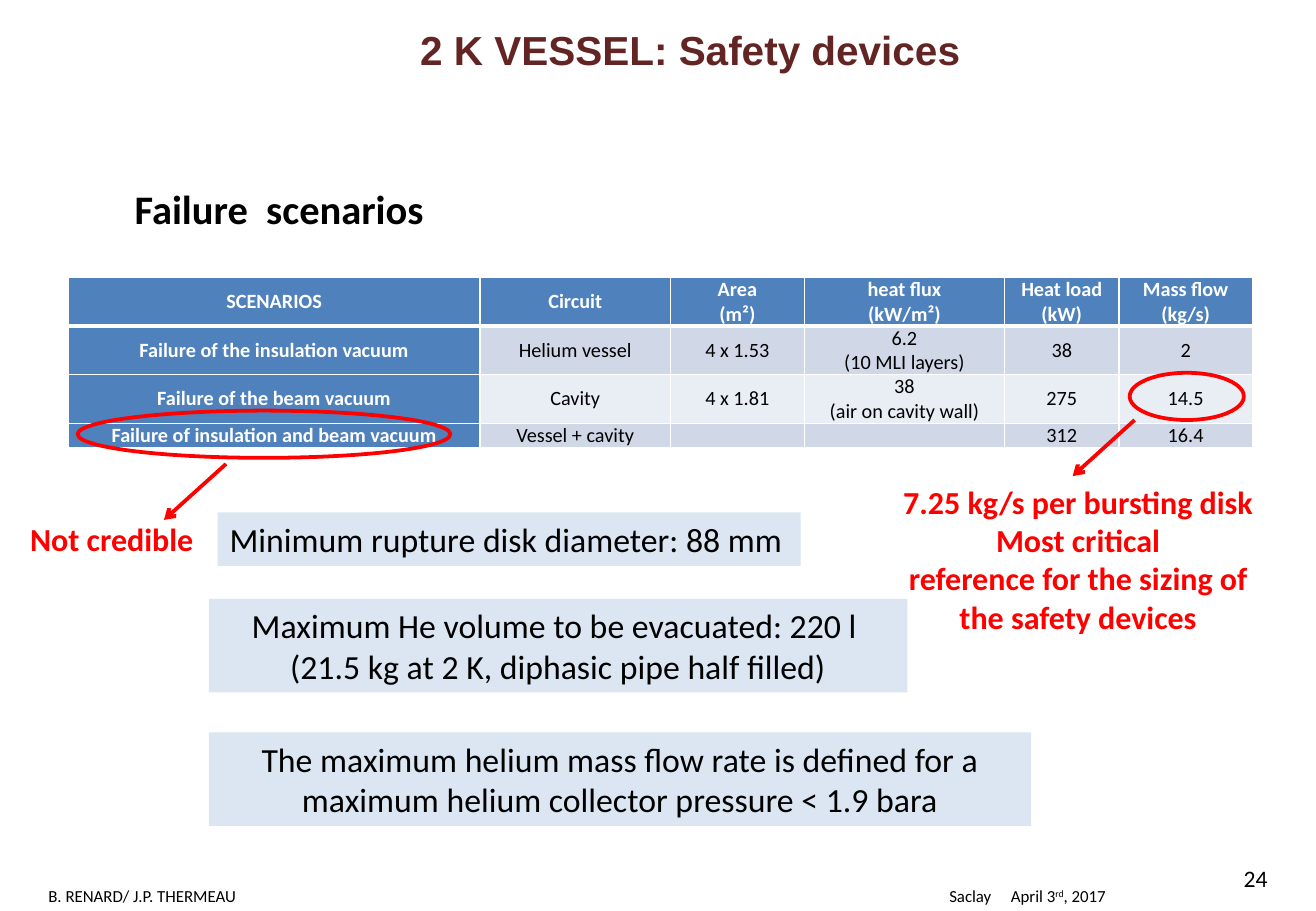
from lxml import etree
from pptx import Presentation
from pptx.dml.color import RGBColor
from pptx.enum.shapes import MSO_CONNECTOR, MSO_SHAPE
from pptx.enum.text import MSO_ANCHOR, PP_ALIGN
from pptx.oxml.ns import qn
from pptx.util import Pt

LEFT, CENTER = PP_ALIGN.LEFT, PP_ALIGN.CENTER
TOP, MIDDLE = MSO_ANCHOR.TOP, MSO_ANCHOR.MIDDLE
RECTANGLE, OVAL = MSO_SHAPE.RECTANGLE, MSO_SHAPE.OVAL
STRAIGHT = MSO_CONNECTOR.STRAIGHT

BLACK = RGBColor(0x00, 0x00, 0x00)
WHITE = RGBColor(0xFF, 0xFF, 0xFF)
RED = RGBColor(0xFF, 0x00, 0x00)
MAROON = RGBColor(0x63, 0x25, 0x23)
BLUE = RGBColor(0x4F, 0x81, 0xBD)
PALE_BLUE = RGBColor(0xDC, 0xE6, 0xF2)
BAND_DARK = RGBColor(0xD0, 0xD8, 0xE8)
BAND_LIGHT = RGBColor(0xE9, 0xED, 0xF4)

COLUMNS = [244, 113, 79.2, 118.8, 67.7, 79.2]
ROWS = [28.8, 28.8, 28.8, 14.4]
SCENARIOS = [
    ["SCENARIOS", "Circuit", "Area\n(m²)", "heat flux\n(kW/m²)", "Heat load\n(kW)", "Mass flow\n(kg/s)"],
    ["Failure of the insulation vacuum", "Helium vessel", "4 x 1.53", "6.2\n(10 MLI layers)", "38", "2"],
    ["Failure of the beam vacuum", "Cavity", "4 x 1.81", "38\n(air on cavity wall)", "275", "14.5"],
    ["Failure of insulation and beam vacuum", "Vessel + cavity", "", "", "312", "16.4"],
]


class Slide:
    font = "Calibri"
    line_width = 2.25

    def __init__(self, prs):
        self.s = prs.slides.add_slide(prs.slide_layouts[6])

    def run(self, p, text, size, color=BLACK, bold=False, name=font):
        r = p.add_run()
        r.text = text
        for key, value in {"size": Pt(size), "bold": bold, "name": name}.items():
            setattr(r.font, key, value)
        r.font.color.rgb = color
        return r

    def fill_text(self, tf, text, size, align=LEFT, **style):
        for i, line in enumerate(text.split("\n")):
            p = tf.paragraphs[0] if i == 0 else tf.add_paragraph()
            p.alignment = align
            if line:
                self.run(p, line, size, **style)
            else:
                etree.SubElement(p._p, qn("a:endParaRPr"), sz=str(size * 100))

    def text(self, box, text, size, anchor=TOP, **style):
        sp = self.s.shapes.add_textbox(*map(Pt, box))
        tf = sp.text_frame
        tf.word_wrap, tf.vertical_anchor = True, anchor
        self.fill_text(tf, text, size, **style)
        return tf.paragraphs[0]

    def panel(self, box, text, align=CENTER):
        sp = self.s.shapes.add_shape(RECTANGLE, *map(Pt, box))
        sp.shadow.inherit = False
        sp.fill.solid()
        sp.fill.fore_color.rgb = PALE_BLUE
        sp.line.fill.background()
        sp.text_frame.word_wrap, sp.text_frame.vertical_anchor = True, TOP
        self.fill_text(sp.text_frame, text, 20, align)

    def ring(self, box):
        sp = self.s.shapes.add_shape(OVAL, *map(Pt, box))
        sp.shadow.inherit = False
        sp.fill.background()
        self.stroke(sp.line)

    def stroke(self, line):
        line.color.rgb = RED
        line.width = Pt(self.line_width)

    def arrow(self, *ends):
        c = self.s.shapes.add_connector(STRAIGHT, *map(Pt, ends))
        self.stroke(c.line)
        etree.SubElement(c.line._get_or_add_ln(), qn("a:tailEnd"), type="arrow")
        etree.SubElement(c._element.spPr, qn("a:effectLst"))

    def border(self, cell, side, width):
        ln = etree.SubElement(cell._tc.get_or_add_tcPr(), qn("a:ln" + side), w=str(Pt(width)))
        solid = etree.SubElement(ln, qn("a:solidFill"))
        etree.SubElement(solid, qn("a:srgbClr"), val=str(WHITE))

    def table(self, left, top, columns, rows, data):
        frame = self.s.shapes.add_table(len(rows), len(columns), Pt(left), Pt(top),
                                        Pt(sum(columns)), Pt(sum(rows)))
        table = frame.table
        for column, width in zip(table.columns, columns):
            column.width = Pt(width)
        for i, (row, height) in enumerate(zip(table.rows, rows)):
            row.height = Pt(height)
            for j, cell in enumerate(row.cells):
                heading = i == 0 or j == 0
                layout = {"margin_left": Pt(5), "margin_right": Pt(5), "margin_top": 0,
                          "margin_bottom": 0, "vertical_anchor": MIDDLE}
                for key, value in layout.items():
                    setattr(cell, key, value)
                for side in "LRTB":
                    below_header = (i, side) in ((0, "B"), (1, "T"))
                    self.border(cell, side, 3 if below_header else 1)
                cell.fill.solid()
                cell.fill.fore_color.rgb = BLUE if heading else BAND_DARK if i % 2 else BAND_LIGHT
                self.fill_text(cell.text_frame, data[i][j], 12, CENTER,
                               color=WHITE if heading else BLACK, bold=heading)

    def footer(self, box, text, ordinal, rest, tabs):
        p = self.text(box, "", 10)
        tab_list = etree.SubElement(p._p.get_or_add_pPr(), qn("a:tabLst"))
        for pos in tabs:
            etree.SubElement(tab_list, qn("a:tab"), pos=str(Pt(pos)), algn="l")
        self.run(p, text, 10)
        self.run(p, ordinal, 10)._r.get_or_add_rPr().set("baseline", "30000")
        self.run(p, rest, 10)


def main():
    prs = Presentation()
    prs.slide_width, prs.slide_height = Pt(780), Pt(540)
    s = Slide(prs)
    s.footer((21.6, 521.3, 676.8, 19.4), "B. RENARD/ J.P. THERMEAU\tSaclay\tApril 3", "rd", ", 2017",
             (534, 570.5))
    s.text((730, 508.3, 39.6, 24.5), "24", 14)
    s.text((163.4, -2.2, 498.2, 62.6), "2 K VESSEL: Safety devices ", 24, anchor=MIDDLE,
           align=CENTER, color=MAROON, bold=True, name="Arial")
    s.text((72.7, 105.8, 584, 36), "Failure  scenarios", 24, bold=True)
    s.table(40.5, 164.4, COLUMNS, ROWS, SCENARIOS)

    s.ring((46, 243.4, 221, 28))
    s.ring((669.6, 221, 67.7, 28))
    s.text((10.8, 304.6, 112.3, 30.2), "Not credible", 19, color=RED, bold=True)
    s.arrow(134, 275, 97.2, 308.2)
    s.arrow(672.5, 249, 635.8, 282.2)
    s.text((522.7, 282.2, 232.6, 99.4),
           "7.25 kg/s per bursting disk\nMost critical\nreference for the sizing of the safety devices",
           19, align=CENTER, color=RED, bold=True)

    s.panel((129, 303.8, 345.6, 31.7), "Minimum rupture disk diameter: 88 mm", LEFT)
    s.panel((123.8, 355, 414, 55.4),
            "Maximum He volume to be evacuated: 220 l \n(21.5 kg at 2 K, diphasic pipe half filled)")
    s.panel((123.8, 434.2, 487.4, 55.4),
            "The maximum helium mass flow rate is defined for a maximum helium collector pressure < 1.9 bara")
    prs.save("out.pptx")


if __name__ == "__main__":
    main()
